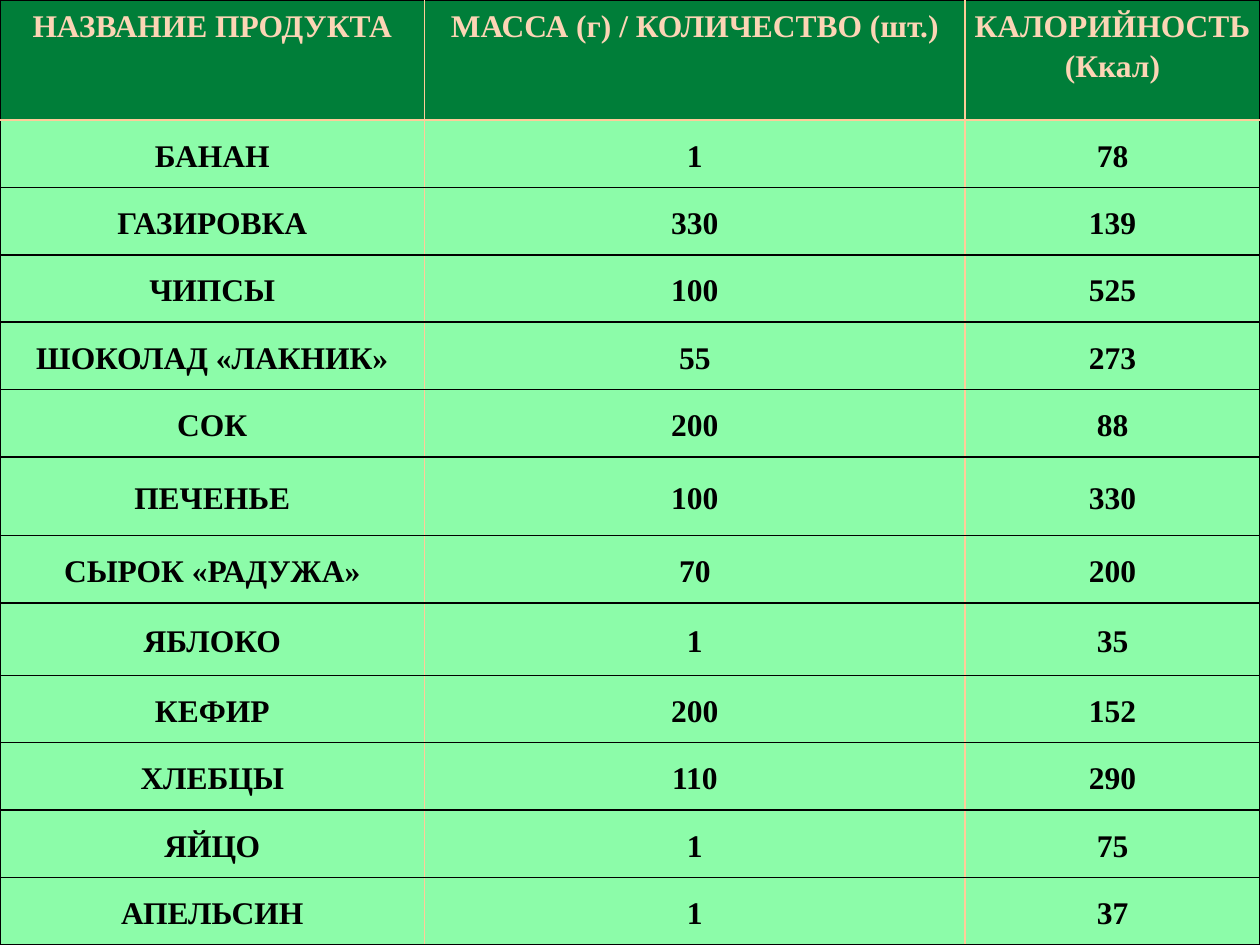
from lxml.etree import SubElement
from pptx import Presentation
from pptx.dml.color import RGBColor
from pptx.enum.text import MSO_ANCHOR, PP_ALIGN
from pptx.oxml.ns import qn
from pptx.util import Pt

DARK_GREEN = RGBColor(0x00, 0x7E, 0x39)
LIGHT_GREEN = RGBColor(0x8C, 0xFC, 0xA9)
PEACH = RGBColor(0xFC, 0xD5, 0xB5)
ORANGE = RGBColor(0xFF, 0xCC, 0x99)
BLACK = RGBColor(0x00, 0x00, 0x00)

FONT = "Times New Roman"
SLIDE_WIDTH, SLIDE_HEIGHT = Pt(720), Pt(540)
COLUMN_WIDTHS = [242.6, 308.9, 168.5]
HEADER_HEIGHT = 68.6
ROW_HEIGHT = 38.5
TALL_ROWS = {"ПЕЧЕНЬЕ": 44.9, "ЯБЛОКО": 41.5}
CELL_MARGIN = Pt(2.2)

HEADER = ("НАЗВАНИЕ ПРОДУКТА", "МАССА (г) / КОЛИЧЕСТВО (шт.)", "КАЛОРИЙНОСТЬ (Ккал)")
PRODUCTS = [
    ("БАНАН", "1", "78"),
    ("ГАЗИРОВКА", "330", "139"),
    ("ЧИПСЫ", "100", "525"),
    ("ШОКОЛАД «ЛАКНИК»", "55", "273"),
    ("СОК", "200", "88"),
    ("ПЕЧЕНЬЕ", "100", "330"),
    ("СЫРОК «РАДУЖА»", "70", "200"),
    ("ЯБЛОКО", "1", "35"),
    ("КЕФИР", "200", "152"),
    ("ХЛЕБЦЫ", "110", "290"),
    ("ЯЙЦО", "1", "75"),
    ("АПЕЛЬСИН", "1", "37"),
]


def set_borders(cell, left, right, top, bottom):
    """Draw 1 pt borders; call before the fill, which must follow them in the XML."""
    properties = cell._tc.get_or_add_tcPr()
    sides = {"a:lnL": left, "a:lnR": right, "a:lnT": top, "a:lnB": bottom}
    for tag, color in sides.items():
        line = SubElement(properties, qn(tag), w=str(Pt(1)))
        fill = SubElement(line, qn("a:solidFill"))
        SubElement(fill, qn("a:srgbClr"), val=str(color))


def format_cell(cell, text, fill_color, font_color, anchor):
    cell.fill.solid()
    cell.fill.fore_color.rgb = fill_color
    cell.vertical_anchor = anchor
    cell.margin_left = cell.margin_right = CELL_MARGIN
    cell.margin_top = cell.margin_bottom = CELL_MARGIN
    cell.text_frame.text = text
    paragraph = cell.text_frame.paragraphs[0]
    paragraph.alignment = PP_ALIGN.CENTER
    paragraph.line_spacing = 1.15
    font = paragraph.runs[0].font
    font.name = FONT
    font.size = Pt(18)
    font.bold = True
    font.color.rgb = font_color


def add_calorie_table(slide):
    rows = [HEADER, *PRODUCTS]
    table = slide.shapes.add_table(
        len(rows), len(HEADER), Pt(0), Pt(0), SLIDE_WIDTH, SLIDE_HEIGHT
    ).table
    table.first_row = False
    table.horz_banding = False
    for column, width in zip(table.columns, COLUMN_WIDTHS):
        column.width = Pt(width)

    last_column = len(HEADER) - 1
    for row_index, values in enumerate(rows):
        is_header = row_index == 0
        height = HEADER_HEIGHT if is_header else TALL_ROWS.get(values[0], ROW_HEIGHT)
        table.rows[row_index].height = Pt(height)
        for column_index, text in enumerate(values):
            cell = table.cell(row_index, column_index)
            set_borders(
                cell,
                left=BLACK if column_index == 0 else ORANGE,
                right=BLACK if column_index == last_column else ORANGE,
                top=ORANGE if row_index == 1 else BLACK,
                bottom=ORANGE if is_header else BLACK,
            )
            if is_header:
                format_cell(cell, text, DARK_GREEN, PEACH, MSO_ANCHOR.TOP)
            else:
                format_cell(cell, text, LIGHT_GREEN, BLACK, MSO_ANCHOR.MIDDLE)


def main():
    presentation = Presentation()
    presentation.slide_width = SLIDE_WIDTH
    presentation.slide_height = SLIDE_HEIGHT
    slide = presentation.slides.add_slide(presentation.slide_layouts[6])
    add_calorie_table(slide)
    presentation.save("out.pptx")


if __name__ == "__main__":
    main()
